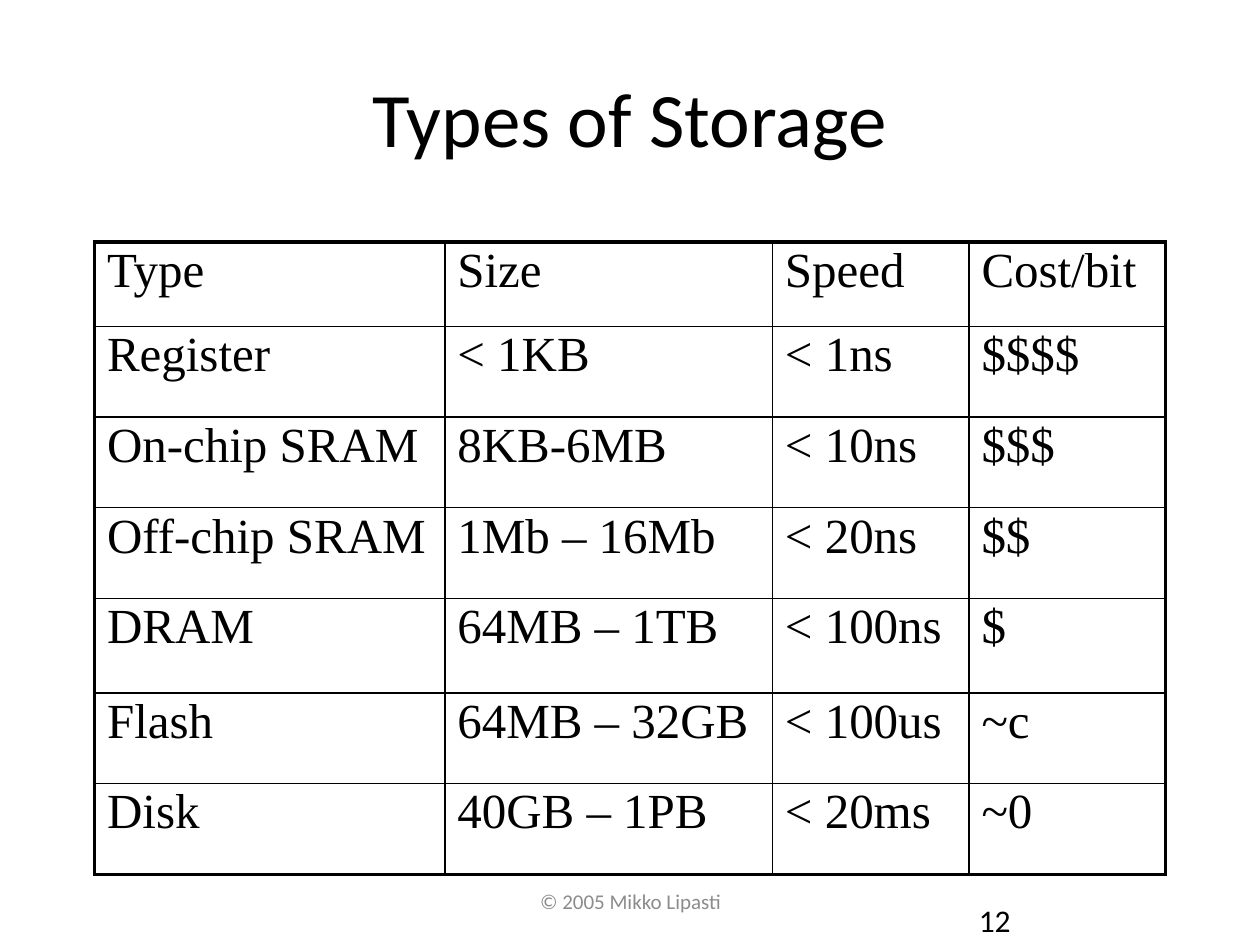
from lxml.etree import SubElement
from pptx import Presentation
from pptx.dml.color import RGBColor
from pptx.enum.text import MSO_ANCHOR as Anchor, PP_ALIGN as Align
from pptx.oxml.ns import qn
from pptx.util import Inches, Pt

WIDTH, HEIGHT = 10, 7.5
COLORS = {"ink": "000000", "footer": "8C8C8C"}
TITLE = "Types of Storage"
FOOTER = "© 2005 Mikko Lipasti"
PAGE_NUMBER = "12"
STORAGE = [
    ("Type", "Size", "Speed", "Cost/bit"),
    ("Register", "< 1KB", "< 1ns", "$$$$"),
    ("On-chip SRAM", "8KB-6MB", "< 10ns", "$$$"),
    ("Off-chip SRAM", "1Mb – 16Mb", "< 20ns", "$$"),
    ("DRAM", "64MB – 1TB", "< 100ns", "$"),
    ("Flash", "64MB – 32GB", "< 100us", "~c"),
    ("Disk", "40GB – 1PB", "< 20ms", "~0"),
]
COLUMN_WIDTHS = [2.78, 2.6, 1.56, 1.56]
ROW_HEIGHTS = [0.67, 0.72, 0.72, 0.72, 0.75, 0.72, 0.72]
TABLE_TOP = 1.92
INNER_LINE, OUTER_LINE = 1, 2.25


def write_text(frame, text, size, font="Calibri", color="ink", align=Align.LEFT):
    paragraph = frame.paragraphs[0]
    paragraph.alignment = align
    run = paragraph.add_run()
    run.text = text
    run.font.size = Pt(size)
    run.font.name = font
    run.font.color.rgb = RGBColor.from_string(COLORS[color])
    return paragraph


def add_text_box(slide, text, left, top, width, height, **text_format):
    box = slide.shapes.add_textbox(*map(Inches, (left, top, width, height)))
    box.text_frame.word_wrap = True
    box.text_frame.vertical_anchor = Anchor.MIDDLE
    return write_text(box.text_frame, text, **text_format)


def set_borders(cell, outer_sides):
    properties = cell._tc.get_or_add_tcPr()
    for side, is_outer in outer_sides.items():
        points = OUTER_LINE if is_outer else INNER_LINE
        line = SubElement(properties, qn(f"a:ln{side}"), w=str(Pt(points)))
        fill = SubElement(line, qn("a:solidFill"))
        SubElement(fill, qn("a:srgbClr"), val=COLORS["ink"])


def add_storage_table(slide):
    rows, columns = len(STORAGE), len(COLUMN_WIDTHS)
    width, height = sum(COLUMN_WIDTHS), sum(ROW_HEIGHTS)
    frame = slide.shapes.add_table(
        rows, columns, Inches((WIDTH - width) / 2), Inches(TABLE_TOP),
        Inches(width), Inches(height))
    table = frame.table
    table.first_row = table.horz_banding = False
    for column, column_width in zip(table.columns, COLUMN_WIDTHS):
        column.width = Inches(column_width)
    for row, row_height in zip(table.rows, ROW_HEIGHTS):
        row.height = Inches(row_height)
    for r, values in enumerate(STORAGE):
        for c, value in enumerate(values):
            cell = table.cell(r, c)
            paragraph = write_text(cell.text_frame, value, size=28, font="Times New Roman")
            paragraph.line_spacing = 0.9
            before = SubElement(paragraph._p.get_or_add_pPr(), qn("a:spcBef"))
            SubElement(before, qn("a:spcPct"), val="20000")
            set_borders(cell, {"L": c == 0, "R": c == columns - 1,
                               "T": r == 0, "B": r == rows - 1})
            cell.fill.background()


def main():
    presentation = Presentation()
    presentation.slide_width, presentation.slide_height = Inches(WIDTH), Inches(HEIGHT)
    slide = presentation.slides.add_slide(presentation.slide_layouts[6])
    add_text_box(slide, FOOTER, 3.42, 6.95, 3.17, 0.4,
                 size=12, color="footer", align=Align.CENTER)
    number = add_text_box(slide, PAGE_NUMBER, 7.17, 7.1, 2.33, 0.4, size=18)
    number.level = 1
    number._p.get_or_add_pPr().set("marL", str(Inches(0.5)))
    add_text_box(slide, TITLE, 0.5, 0.3, WIDTH - 1, 1.25, size=44, align=Align.CENTER)
    add_storage_table(slide)
    presentation.save("out.pptx")


if __name__ == "__main__":
    main()
